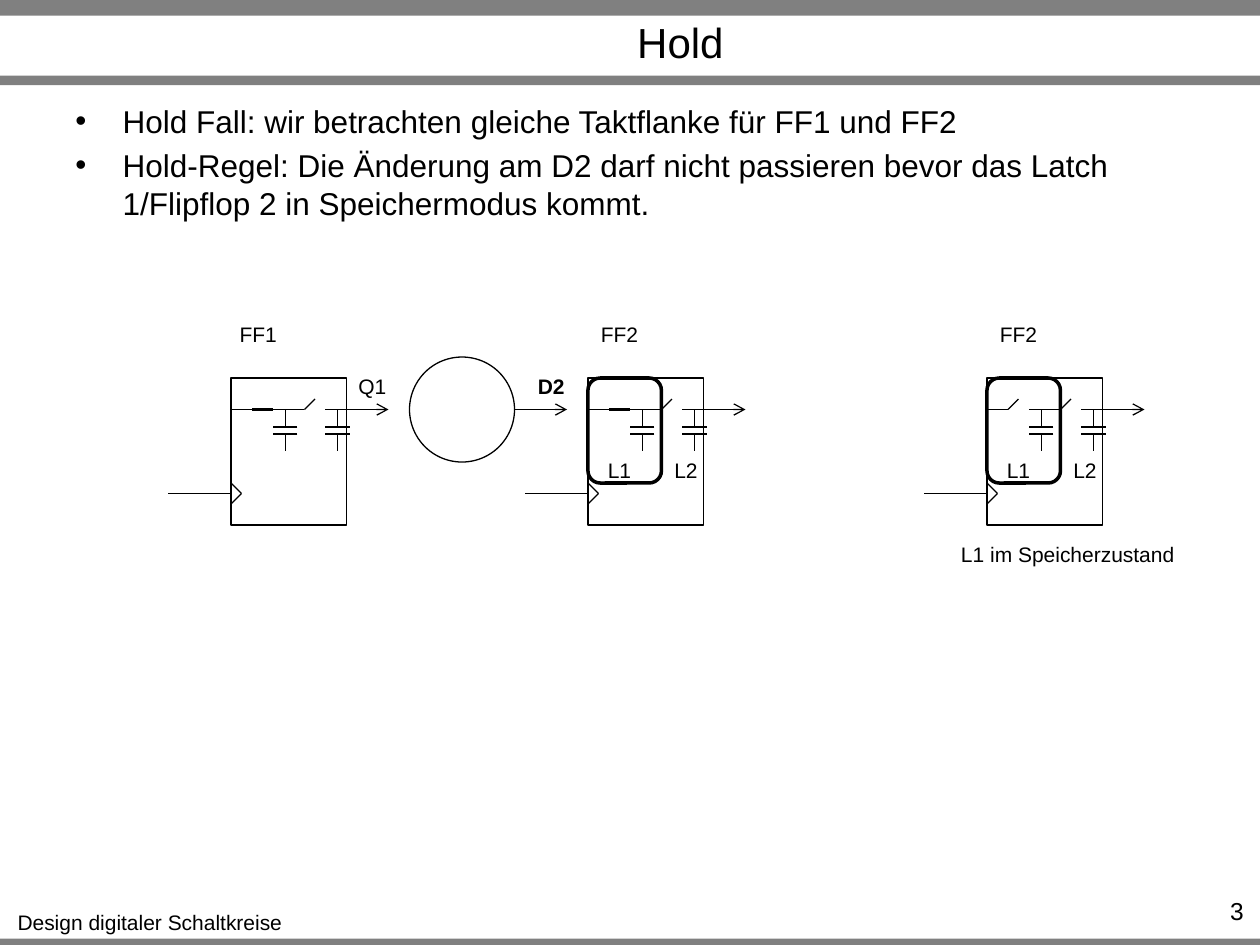
from dataclasses import dataclass

from lxml.etree import SubElement
from pptx import Presentation
from pptx.dml.color import RGBColor
from pptx.enum.shapes import MSO_CONNECTOR, MSO_SHAPE
from pptx.enum.text import MSO_ANCHOR, PP_ALIGN
from pptx.oxml.ns import qn
from pptx.util import Pt


@dataclass(frozen=True)
class Theme:
    font: str = "Arial"
    ink: RGBColor = RGBColor(0, 0, 0)
    bar: RGBColor = RGBColor(0x80, 0x80, 0x80)
    title_size: float = 24
    body_size: float = 18
    number_size: float = 14
    label_size: float = 12
    thin: float = 0.75
    thick: float = 2


class SlideBuilder:
    def __init__(self, slide, theme):
        self.slide = slide
        self.theme = theme

    def bar(self, top, height):
        shape = self.slide.shapes.add_shape(
            MSO_SHAPE.RECTANGLE, 0, Pt(top), Pt(720), Pt(height))
        shape.shadow.inherit = False
        shape.fill.solid()
        shape.fill.fore_color.rgb = self.theme.bar
        shape.line.fill.background()

    def outline(self, kind, left, top, width, height, weight=None):
        shape = self.slide.shapes.add_shape(
            kind, Pt(left), Pt(top), Pt(width), Pt(height))
        shape.shadow.inherit = False
        shape.fill.background()
        shape.line.color.rgb = self.theme.ink
        shape.line.width = Pt(weight or self.theme.thin)

    def line(self, start, end, weight=None, arrow=False, shapes=None):
        shapes = shapes or self.slide.shapes
        connector = shapes.add_connector(
            MSO_CONNECTOR.STRAIGHT, *(Pt(value) for value in (*start, *end)))
        connector.line.color.rgb = self.theme.ink
        connector.line.width = Pt(weight or self.theme.thin)
        properties = connector._element.spPr
        if arrow:
            SubElement(properties.find(qn("a:ln")), qn("a:tailEnd"), type="arrow")
        SubElement(properties, qn("a:effectLst"))

    def text(self, text, left, top, width, height, size=None, align=PP_ALIGN.CENTER,
             anchor=MSO_ANCHOR.TOP, wrap=False, bold=False, bullets=False):
        box = self.slide.shapes.add_textbox(Pt(left), Pt(top), Pt(width), Pt(height))
        text_frame = box.text_frame
        text_frame.word_wrap = wrap
        text_frame.vertical_anchor = anchor
        text_frame.text = text
        for index, paragraph in enumerate(text_frame.paragraphs):
            paragraph.alignment = align
            if bullets:
                self.bullet(paragraph)
            if index:
                paragraph.space_before = Pt(3.6)
            for run in paragraph.runs:
                run.font.name = self.theme.font
                run.font.size = Pt(size or self.theme.label_size)
                run.font.bold = bold
                run.font.color.rgb = self.theme.ink

    def bullet(self, paragraph):
        properties = paragraph._p.get_or_add_pPr()
        properties.set("marL", str(Pt(27)))
        properties.set("indent", str(-Pt(27)))
        SubElement(properties, qn("a:buFont"), typeface=self.theme.font)
        SubElement(properties, qn("a:buChar"), char="•")

    def label(self, text, left, top, width, bold=False):
        self.text(text, left, top, width, 21.6, bold=bold)

    def capacitor(self, center, top):
        shapes = self.slide.shapes.add_group_shape().shapes
        upper, lower = top + 10, top + 14
        self.line((center, top), (center, upper), shapes=shapes)
        for plate in (upper, lower):
            self.line((center + 7, plate), (center - 7, plate), shapes=shapes)
        self.line((center, lower), (center, lower + 10), shapes=shapes)

    def switch(self, left, wire, closed):
        if closed:
            self.line((left, wire), (left + 12, wire), self.theme.thick)
        else:
            self.line((left, wire), (left + 6, wire - 6))

    def flip_flop(self, name, left, name_left, first_closed, latches):
        top, wire, clock = 216, 234, 282
        self.outline(MSO_SHAPE.RECTANGLE, left, top, 66, 84)
        for edge in (clock - 6, clock + 6):
            self.line((left, edge), (left + 6, clock))
        self.line((left, clock), (left - 36, clock))
        for start, end in ((0, 12), (24, 42), (54, 60)):
            self.line((left + start, wire), (left + end, wire))
        self.line((left + 60, wire), (left + 90, wire), arrow=True)
        self.switch(left + 12, wire, first_closed)
        self.switch(left + 42, wire, False)
        for center in (31, 61):
            self.capacitor(left + center, wire)
        self.label(name, name_left, 180, 36)
        if latches:
            self.label("L1", left + 4, 258, 28)
            self.label("L2", left + 42, 258, 28)
            self.outline(MSO_SHAPE.ROUNDED_RECTANGLE, left, top, 42, 60,
                         self.theme.thick)


def main():
    presentation = Presentation()
    presentation.slide_width = Pt(720)
    presentation.slide_height = Pt(540)
    slide = presentation.slides.add_slide(presentation.slide_layouts[6])
    theme = Theme()
    builder = SlideBuilder(slide, theme)

    for top, height in ((536.4, 5.4), (0, 9), (43.2, 5.4)):
        builder.bar(top, height)
    builder.label("Design digitaler Schaltkreise", 2.2, 516.2, 167)
    builder.text("Hold", 93.6, 10.1, 590.4, 27.4, theme.title_size,
                 anchor=MSO_ANCHOR.MIDDLE, wrap=True)
    builder.text(
        "Hold Fall: wir betrachten gleiche Taktflanke für FF1 und FF2\n"
        "Hold-Regel: Die Änderung am D2 darf nicht passieren bevor das Latch "
        "1/Flipflop 2 in Speichermodus kommt.",
        36, 54.7, 648, 89.3, theme.body_size, PP_ALIGN.LEFT, wrap=True, bullets=True)
    builder.text("3", 655.2, 508.3, 62.6, 17.3, theme.number_size,
                 PP_ALIGN.RIGHT, wrap=True)

    builder.flip_flop("FF1", 132, 129.6, first_closed=True, latches=False)
    builder.outline(MSO_SHAPE.OVAL, 234, 204, 60, 60)
    builder.line((294, 234), (324, 234), arrow=True)
    builder.flip_flop("FF2", 336, 336, first_closed=True, latches=True)
    builder.flip_flop("FF2", 564, 564, first_closed=False, latches=True)
    builder.label("Q1", 197.3, 210, 31)
    builder.label("D2", 300, 210, 30, bold=True)
    builder.label("L1 im Speicherzustand", 541.4, 306, 137.5)

    presentation.save("out.pptx")


if __name__ == "__main__":
    main()
